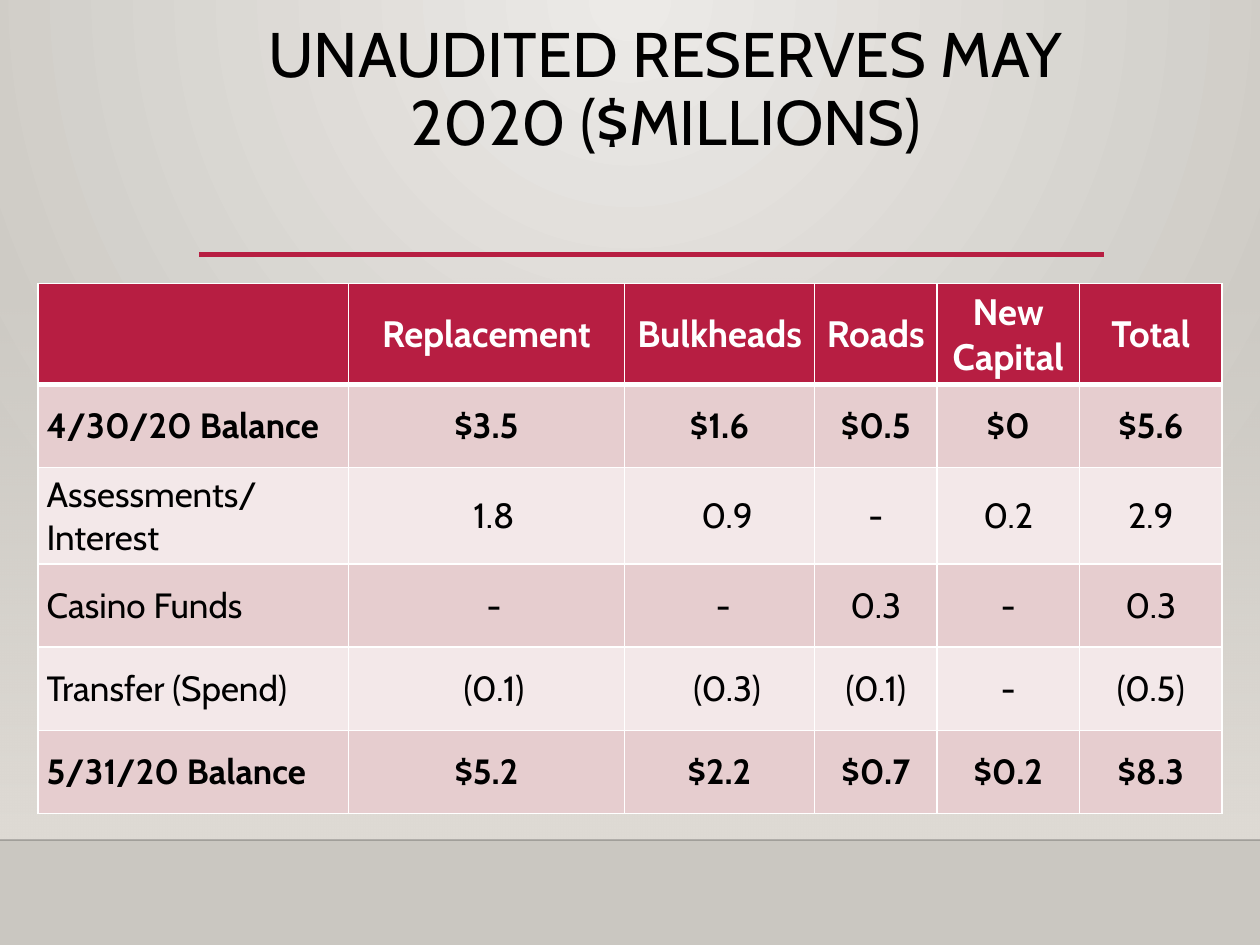
import pptx
import pptx.dml.color
import pptx.enum.shapes
import pptx.enum.text
import pptx.oxml
import pptx.oxml.ns
import pptx.util
from lxml import etree

Pt = pptx.util.Pt
qn = pptx.oxml.ns.qn
ALIGN = pptx.enum.text.PP_ALIGN
ANCHOR = pptx.enum.text.MSO_ANCHOR

COLORS = {
    "black": "000000",
    "white": "FFFFFF",
    "accent": "B71E42",
    "band_dark": "E6CDCF",
    "band_light": "F3E8E9",
    "glow": "ECEAE7",
    "edge": "CAC7C1",
    "haze": "DFDBD5",
    "floor": "000001",
}

HEADERS = ["", "Replacement", "Bulkheads", "Roads", "New Capital", "Total"]
ROWS = [
    ["4/30/20 Balance", "$3.5", "$1.6", "$0.5", "$0", "$5.6"],
    ["Assessments/Interest", "1.8", "0.9", "-", "0.2", "2.9"],
    ["Casino Funds", "-", "-", "0.3", "-", "0.3"],
    ["Transfer (Spend)", "(0.1)", "(0.3)", "(0.1)", "-", "(0.5)"],
    ["5/31/20 Balance", "$5.2", "$2.2", "$0.7", "$0.2", "$8.3"],
]
COL_WIDTHS = [177.6, 157.6, 108.8, 69.8, 81.6, 81.4]
ROW_HEIGHTS = [42.5] + [47.5] * 5
NUDGES = {(2, 1): 8.6, (3, 1): 8.6, (4, 1): 8.6,
          (2, 2): 8.6, (3, 2): 4.3, (4, 2): 8.6}


def rgb(name):
    return pptx.dml.color.RGBColor.from_string(COLORS[name])


def sub(parent, tag, **attrs):
    return etree.SubElement(parent, qn(tag), attrs)


def set_alpha(element, percent):
    color = next(element.iter(qn("a:srgbClr")))
    sub(color, "a:alpha", val=str(percent * 1000))


class Deck:
    font = "Cabin"

    def __init__(self, width, height):
        self.prs = pptx.Presentation()
        self.prs.slide_width = Pt(width)
        self.prs.slide_height = Pt(height)
        self.s = self.prs.slides.add_slide(self.prs.slide_layouts[6])

    def gradient(self, fill, start, end):
        fill.gradient()
        for stop, position, name in zip(fill.gradient_stops, (0, 1), (start, end)):
            stop.position = position
            stop.color.rgb = rgb(name)

    def background(self, start, end):
        fill = self.s.background.fill
        self.gradient(fill, start, end)
        lin = next(self.s.element.iter(qn("a:lin")))
        circle = etree.Element(qn("a:path"), {"path": "circle"})
        sub(circle, "a:fillToRect", l="43000", t="0", r="43000", b="100000")
        lin.getparent().replace(lin, circle)

    def fading_rect(self, x, y, w, h, name):
        sp = self.s.shapes.add_shape(
            pptx.enum.shapes.MSO_SHAPE.RECTANGLE, Pt(x), Pt(y), Pt(w), Pt(h))
        sp.shadow.inherit = False
        sp.line.fill.background()
        self.gradient(sp.fill, name, name)
        sp.fill.gradient_angle = 270
        set_alpha(next(sp.element.iter(qn("a:gs"))), 0)

    def rule(self, x1, x2, y, name, width, alpha=100):
        ln = self.s.shapes.add_connector(
            pptx.enum.shapes.MSO_CONNECTOR.STRAIGHT, Pt(x1), Pt(y), Pt(x2), Pt(y))
        ln.line.color.rgb = rgb(name)
        ln.line.width = Pt(width)
        if alpha < 100:
            set_alpha(ln.element.spPr, alpha)
        sub(ln.element.spPr, "a:effectLst")

    def add_text(self, p, text, size, name, bold=False, align=ALIGN.CENTER):
        p.alignment = align
        r = p.add_run()
        r.text = text
        r.font.name = self.font
        r.font.size = Pt(size)
        r.font.bold = bold
        r.font.color.rgb = rgb(name)

    def title(self, x, y, w, h, text):
        tf = self.s.shapes.add_textbox(Pt(x), Pt(y), Pt(w), Pt(h)).text_frame
        tf.word_wrap = True
        tf.vertical_anchor = ANCHOR.TOP
        p = tf.paragraphs[0]
        p.line_spacing = 0.9
        self.add_text(p, text, 36, "black")

    def borders(self, cell, top, bottom):
        tc_pr = cell._tc.get_or_add_tcPr()
        for side, width in (("L", 1), ("R", 1), ("T", top), ("B", bottom)):
            ln = sub(tc_pr, "a:ln" + side, w=str(int(Pt(width))))
            sub(sub(ln, "a:solidFill"), "a:srgbClr", val=COLORS["white"])

    def table(self, x, y, headers, rows, widths, heights, nudges):
        frame = self.s.shapes.add_table(
            len(heights), len(widths), Pt(x), Pt(y), Pt(sum(widths)), Pt(sum(heights)))
        tbl = frame.table
        for column, width in zip(tbl.columns, widths):
            column.width = Pt(width)
        for row, height in zip(tbl.rows, heights):
            row.height = Pt(height)
        for i, values in enumerate([headers] + rows):
            header = i == 0
            bold = i in (0, 1, len(rows))
            fill = "accent" if header else "band_dark" if i % 2 else "band_light"
            for j, text in enumerate(values):
                cell = tbl.cell(i, j)
                self.borders(cell, 3 if i == 1 else 1, 3 if header else 1)
                cell.fill.solid()
                cell.fill.fore_color.rgb = rgb(fill)
                cell.vertical_anchor = ANCHOR.MIDDLE
                cell.margin_left = Pt(5 + nudges.get((i, j), 0))
                cell.margin_right = Pt(5)
                cell.margin_top = cell.margin_bottom = Pt(3.6)
                if text:
                    self.add_text(cell.text_frame.paragraphs[0], text,
                                  21 if header else 20,
                                  "white" if header else "black", bold,
                                  ALIGN.CENTER if j else ALIGN.LEFT)


def main():
    deck = Deck(720, 540)
    deck.background("glow", "edge")
    deck.fading_rect(0, 158.4, 720, 321.6, "haze")
    deck.rule(0, 720, 480, "floor", 1, alpha=20)
    deck.rule(113.8, 631, 145.4, "accent", 2.5)
    deck.title(99.4, 9.4, 561.6, 46, "UNAUDITED RESERVES MAY 2020 ($MILLIONS)")
    deck.table(21.6, 162, HEADERS, ROWS, COL_WIDTHS, ROW_HEIGHTS, NUDGES)
    deck.prs.save("out.pptx")


if __name__ == "__main__":
    main()
